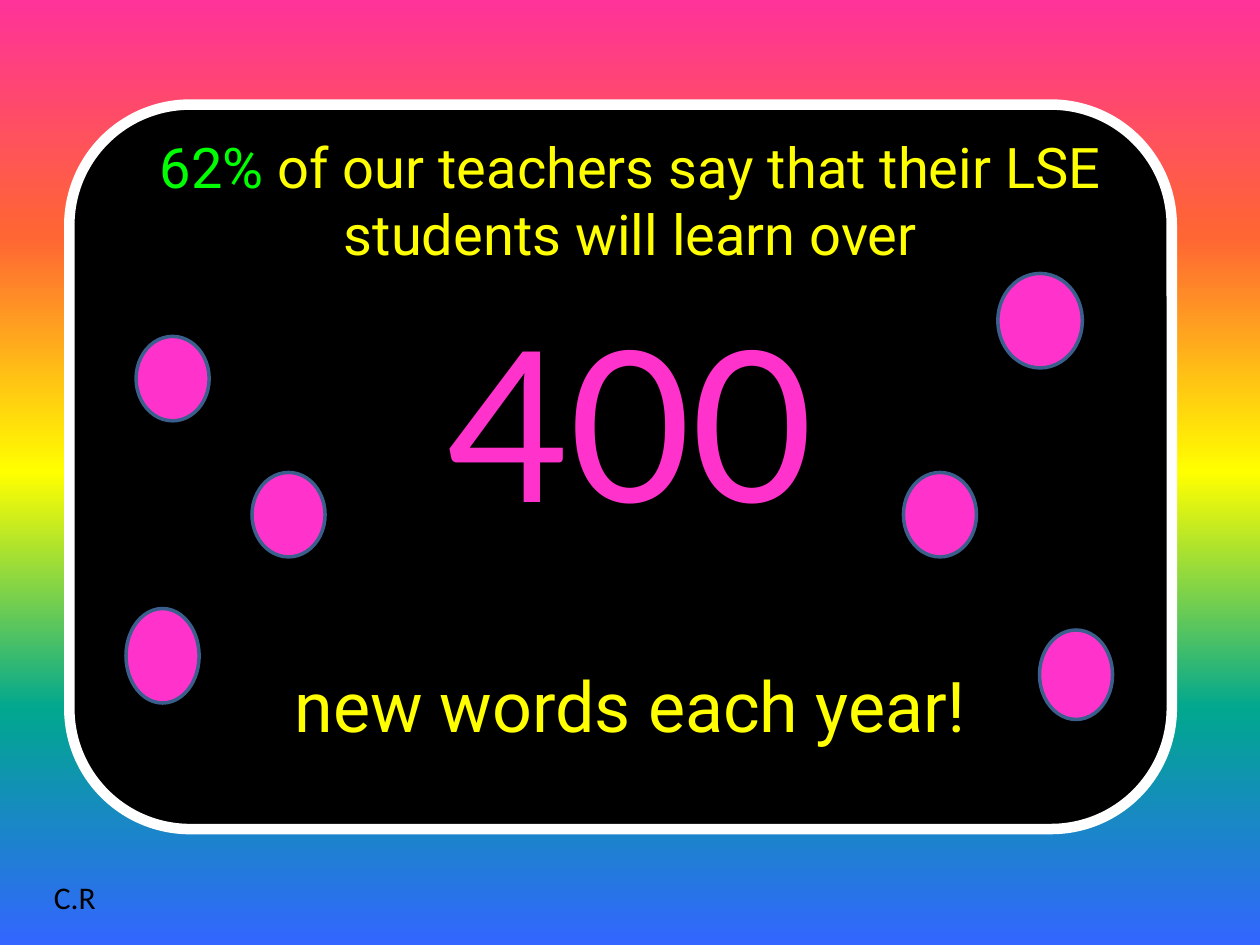
from lxml import etree
from pptx import Presentation
from pptx.dml.color import RGBColor
from pptx.enum.shapes import MSO_SHAPE
from pptx.enum.text import MSO_AUTO_SIZE, PP_ALIGN
from pptx.oxml.ns import qn
from pptx.util import Inches, Pt

ROUNDED, OVAL = MSO_SHAPE.ROUNDED_RECTANGLE, MSO_SHAPE.OVAL
LEFT, CENTER = PP_ALIGN.LEFT, PP_ALIGN.CENTER
FIT_SHAPE = MSO_AUTO_SIZE.SHAPE_TO_FIT_TEXT

COLORS = {
    "panel": "000000",
    "border": "FFFFFF",
    "percent": "00FF00",
    "message": "FFFF00",
    "accent": "FF33CC",
    "dot_line": "3A5F8C",
    "initials": "000000",
}
RAINBOW = ["FF3399", "FF6633", "FFFF00", "01A78F", "3366FF"]
DOTS = [
    (7.92, 2.17, 0.67, 0.75),
    (1, 4.83, 0.58, 0.75),
    (1.08, 2.67, 0.58, 0.67),
    (7.17, 3.75, 0.58, 0.67),
    (8.25, 5, 0.58, 0.71),
    (2, 3.75, 0.58, 0.67),
]


class Poster:
    def __init__(self, slide):
        self.slide = slide

    def background(self, stops):
        """Fill the background from top to bottom with evenly spaced colours."""
        fill = self.slide.background.fill
        fill.gradient()
        fill.gradient_angle = 270
        stop_list = next(self.slide.element.iter(qn("a:gsLst")))
        for old_stop in list(stop_list):
            stop_list.remove(old_stop)
        for i, color in enumerate(stops):
            position = 100000 * i // (len(stops) - 1)
            stop = etree.SubElement(stop_list, qn("a:gs"), pos=str(position))
            etree.SubElement(stop, qn("a:srgbClr"), val=color)

    def shape(self, preset, box, fill, line, weight):
        shape = self.slide.shapes.add_shape(preset, *map(Inches, box))
        shape.shadow.inherit = False
        shape.fill.solid()
        shape.fill.fore_color.rgb = RGBColor.from_string(COLORS[fill])
        shape.line.color.rgb = RGBColor.from_string(COLORS[line])
        shape.line.width = Pt(weight)

    def text(self, box, runs, font, size, align=CENTER):
        """Add one paragraph from (wording, colour name) runs."""
        frame = self.slide.shapes.add_textbox(*map(Inches, box)).text_frame
        frame.word_wrap = True
        frame.auto_size = FIT_SHAPE
        paragraph = frame.paragraphs[0]
        paragraph.alignment = align
        for wording, color in runs:
            run = paragraph.add_run()
            run.text = wording
            run.font.name = font
            run.font.size = Pt(size)
            run.font.color.rgb = RGBColor.from_string(COLORS[color])


def main():
    deck = Presentation()
    deck.slide_width, deck.slide_height = Inches(10), Inches(7.5)
    poster = Poster(deck.slides.add_slide(deck.slide_layouts[6]))

    poster.background(RAINBOW)
    poster.shape(ROUNDED, (0.55, 0.83, 8.75, 5.75), "panel", "border", 6)
    poster.text(
        (0.92, 1, 8.17, 1.18),
        [
            ("62% ", "percent"),
            ("of our teachers say that their LSE students will learn over", "message"),
        ],
        "Roboto",
        32,
    )
    poster.text((2.88, 2.27, 4.25, 2.12), [("400", "accent")], "Lato", 120)
    poster.text((0.25, 5.21, 9.5, 0.77), [("new words each year!", "message")], "Roboto", 40)
    for dot in DOTS:
        poster.shape(OVAL, dot, "accent", "dot_line", 2)
    poster.text((0.33, 6.92, 0.75, 0.4), [("C.R", "initials")], "Calibri", 18, LEFT)

    deck.save("out.pptx")


if __name__ == "__main__":
    main()
